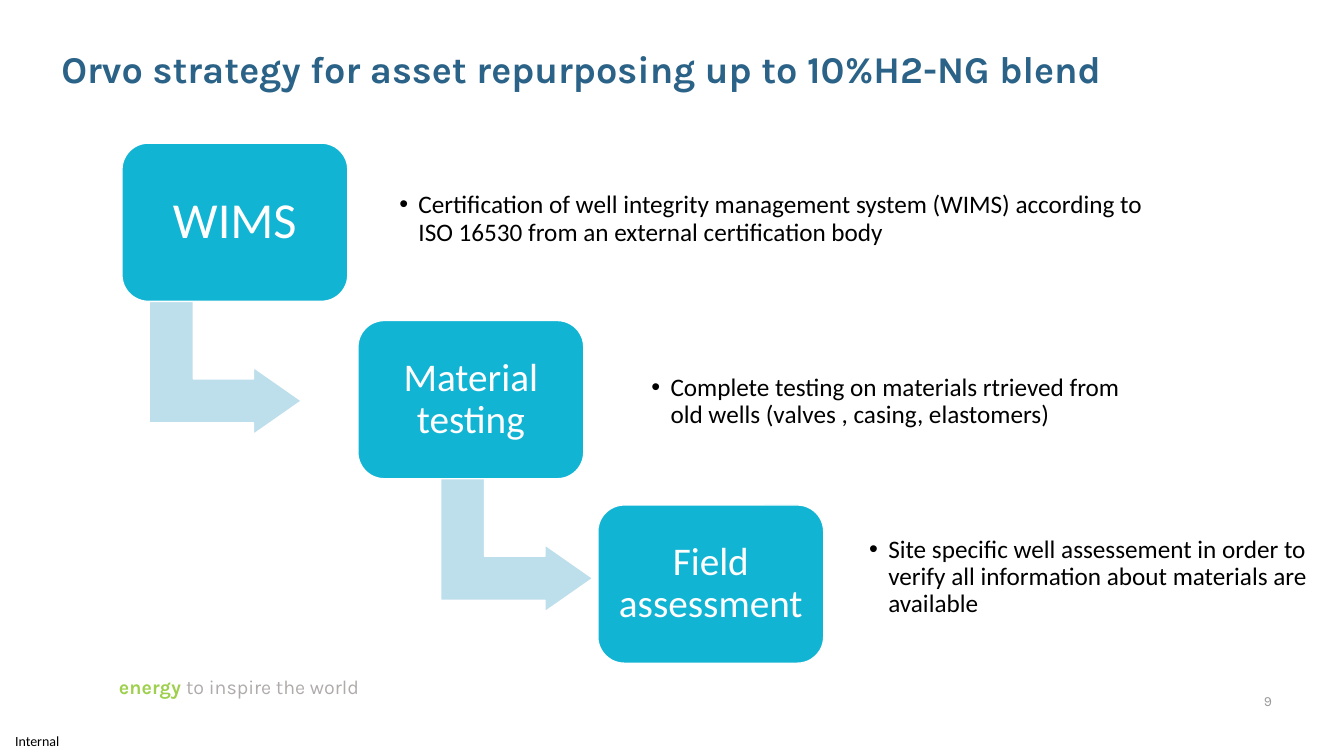
from dataclasses import dataclass

from lxml import etree
from pptx import Presentation
from pptx import util as u
from pptx.dml.color import RGBColor
from pptx.enum import shapes, text
from pptx.oxml import ns


@dataclass(frozen=True)
class Theme:
    heading: str = "2B6287"
    step: str = "12B4D4"
    arrow: str = "BDDEEB"
    white: str = "FFFFFF"
    body: str = "000000"
    green: str = "9ED04E"
    motto: str = "AFABAB"
    number: str = "9B9A9C"
    brand_font: str = "Karla"
    body_font: str = "Calibri"
    title_size: int = 27
    body_size: int = 18
    motto_size: int = 14
    small_size: int = 10


THEME = Theme()
STEP_WIDTH, STEP_HEIGHT = 2.24, 1.57
ARROW_WIDTH, ARROW_HEIGHT = 1.33, 1.51
ARROW_DROP = 1.47  # from the top of a step to its unrotated arrow
CAPTION_HEIGHT = 1.27

# label, label size, label inset, step left, top, arrow offset, caption box left, top, width, caption
STEPS = [
    ("WIMS", 36, 0.15, 1.21, 1.42, 0.36, (3.89, 1.54, 7.72),
     "Certification of well integrity management system (WIMS) according to "
     "ISO 16530 from an external certification body"),
    ("Material testing", 28, 0.12, 3.55, 3.18, 0.91, (6.39, 3.35, 4.95),
     "Complete testing on materials rtrieved from old wells "
     "(valves , casing, elastomers)"),
    ("Field assessment", 28, 0.12, 5.93, 5.01, None, (8.55, 5.09, 4.63),
     "Site specific well assessement in order to verify all information "
     "about materials are available"),
]


def set_frame(frame, insets, anchor=text.MSO_ANCHOR.TOP, wrap=True):
    left, top, right, bottom = (u.Inches(inset) for inset in insets)
    values = {"margin_left": left, "margin_top": top, "margin_right": right,
              "margin_bottom": bottom, "vertical_anchor": anchor, "word_wrap": wrap}
    for name, value in values.items():
        setattr(frame, name, value)


def add_run(paragraph, wording, size, color, font=THEME.body_font, bold=False):
    run = paragraph.add_run()
    run.text = wording
    for name, value in {"name": font, "size": u.Pt(size), "bold": bold}.items():
        setattr(run.font, name, value)
    run.font.color.rgb = RGBColor.from_string(color)


def add_text_box(slide, box, insets, **frame_values):
    shape = slide.shapes.add_textbox(*(u.Inches(length) for length in box))
    set_frame(shape.text_frame, insets, **frame_values)
    return shape.text_frame.paragraphs[0]


def add_filled_shape(slide, kind, box, fill, adjustments):
    shape = slide.shapes.add_shape(kind, *(u.Inches(length) for length in box))
    shape.shadow.inherit = False
    shape.fill.solid()
    shape.fill.fore_color.rgb = RGBColor.from_string(fill)
    shape.line.color.rgb = RGBColor.from_string(THEME.white)
    shape.line.width = u.Pt(1)
    for index, value in enumerate(adjustments):
        shape.adjustments[index] = value
    return shape


def add_bullet(paragraph, indent):
    properties = paragraph._p.get_or_add_pPr()
    properties.set("marL", str(u.Inches(indent)))
    properties.set("indent", str(-u.Inches(indent)))
    etree.SubElement(properties, ns.qn("a:buFont"), typeface="Arial")
    etree.SubElement(properties, ns.qn("a:buChar"), char="•")


def add_title(slide, box):
    paragraph = add_text_box(slide, box, (0.1, 0.05, 0.1, 0.05))
    add_run(paragraph, "Orvo strategy for asset repurposing up to 10%H2-NG blend",
            THEME.title_size, THEME.heading, THEME.brand_font, True)


def add_footer(slide, width, height):
    # Page number
    paragraph = add_text_box(slide, (width - 1, 6.85, 0.49, 0.21), (0.02,) * 4)
    paragraph.alignment = text.PP_ALIGN.CENTER
    add_run(paragraph, "9", THEME.small_size, THEME.number, THEME.brand_font)
    # Classification
    paragraph = add_text_box(slide, (0, height - 0.29, 0.74, 0.29), (0.15, 0, 0, 0),
                             anchor=text.MSO_ANCHOR.MIDDLE, wrap=False)
    add_run(paragraph, "Internal", THEME.small_size, THEME.body)
    # Motto
    paragraph = add_text_box(slide, (1.16, 6.68, 4.09, 0.42), (0.02,) * 4)
    add_run(paragraph, "energy ", THEME.motto_size, THEME.green, THEME.brand_font, True)
    add_run(paragraph, "to inspire the world", THEME.motto_size, THEME.motto,
            THEME.brand_font)


def add_step(slide, label, size, inset, left, top, arrow_offset, caption_box, caption):
    # Arrow to the next step, behind the box
    if arrow_offset is not None:
        arrow = add_filled_shape(
            slide, shapes.MSO_SHAPE.BENT_UP_ARROW,
            (left + arrow_offset, top + ARROW_DROP, ARROW_WIDTH, ARROW_HEIGHT),
            THEME.arrow, (0.328, 0.25, 0.358))
        arrow.rotation = 90
    # Step box with its label
    step = add_filled_shape(slide, shapes.MSO_SHAPE.ROUNDED_RECTANGLE,
                            (left, top, STEP_WIDTH, STEP_HEIGHT), THEME.step, (0.167,))
    set_frame(step.text_frame, (inset,) * 4, text.MSO_ANCHOR.MIDDLE)
    paragraph = step.text_frame.paragraphs[0]
    paragraph.alignment = text.PP_ALIGN.CENTER
    paragraph.line_spacing = 0.9
    add_run(paragraph, label, size, THEME.white)
    # Bulleted caption
    paragraph = add_text_box(slide, (*caption_box, CAPTION_HEIGHT), (0.07,) * 4,
                             anchor=text.MSO_ANCHOR.MIDDLE)
    paragraph.level = 1
    paragraph.line_spacing = 0.9
    add_bullet(paragraph, 0.19)
    add_run(paragraph, caption, THEME.body_size, THEME.body)


def main():
    width, height = 13.33, 7.5
    presentation = Presentation()
    presentation.slide_width = u.Inches(width)
    presentation.slide_height = u.Inches(height)
    slide = presentation.slides.add_slide(presentation.slide_layouts[6])
    add_footer(slide, width, height)
    add_title(slide, (0.51, 0.4, 12.31, 1.19))
    for step in STEPS:
        add_step(slide, *step)
    presentation.save("out.pptx")


if __name__ == "__main__":
    main()
